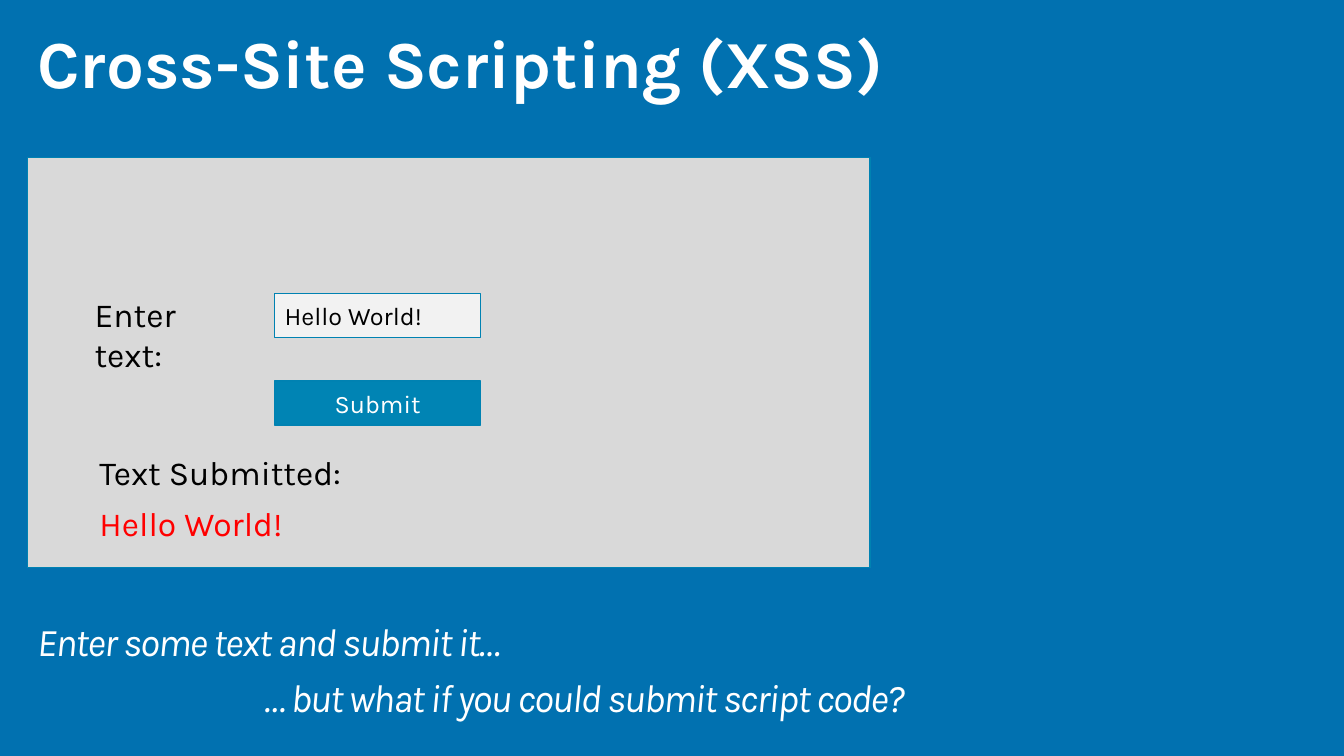
import pptx
import pptx.util
import pptx.dml.color
import pptx.enum.shapes
import pptx.enum.text
from dataclasses import dataclass

Pt = pptx.util.Pt
Align = pptx.enum.text.PP_ALIGN
Anchor = pptx.enum.text.MSO_ANCHOR

TITLE = "Cross-Site Scripting (XSS)"
TEASERS = [
    ("Enter some text and submit it…", 19.5, 441.5),
    ("… but what if you could submit script code?", 181.5, 481.5),
]
FORM_LABELS = [
    ("Enter text:", "ink", 60.5, 206.5, 121.5),
    ("Text Submitted:", "ink", 64, 319.5, 279.5),
    ("Hello World!", "echo", 64, 355.5, 279.5),
]
FORM_CONTROLS = [
    ("Hello World!", "field", "ink", Align.LEFT, 209.5),
    ("Submit", "button", "white", Align.CENTER, 272.25),
]


@dataclass
class Theme:
    font: str = "Karla"
    background: str = "0171B0"
    panel: str = "D9D9D9"
    field: str = "F2F2F2"
    button: str = "0084B4"
    border: str = "0082B2"
    ink: str = "000000"
    white: str = "FFFFFF"
    echo: str = "FF0000"
    title_size: int = 48
    teaser_size: int = 28
    label_size: int = 24
    control_size: int = 18


THEME = Theme()


def rgb(role):
    return pptx.dml.color.RGBColor.from_string(getattr(THEME, role))


def place(*lengths):
    return [Pt(length) for length in lengths]


def write(frame, text, size, role, align=Align.LEFT, anchor=Anchor.TOP):
    frame.word_wrap = True
    frame.auto_size = pptx.enum.text.MSO_AUTO_SIZE.NONE
    frame.vertical_anchor = anchor
    paragraph = frame.paragraphs[0]
    paragraph.text = text
    paragraph.alignment = align
    paragraph.font.name = THEME.font
    paragraph.font.size = Pt(size)
    paragraph.font.color.rgb = rgb(role)
    return paragraph


def add_box(slide, role, *lengths):
    box = slide.shapes.add_shape(
        pptx.enum.shapes.MSO_SHAPE.RECTANGLE, *place(*lengths))
    box.shadow.inherit = False
    box.fill.solid()
    box.fill.fore_color.rgb = rgb(role)
    box.line.color.rgb = rgb("border")
    box.line.width = Pt(1)
    return box


def add_text(slide, *lengths):
    return slide.shapes.add_textbox(*place(*lengths)).text_frame


def main():
    deck = pptx.Presentation()
    deck.slide_width, deck.slide_height = place(960, 540)
    slide = deck.slides.add_slide(deck.slide_layouts.get_by_name("Title Only"))
    slide.background.fill.solid()
    slide.background.fill.fore_color.rgb = rgb("background")

    title = slide.shapes.title
    title.left, title.top, title.width, title.height = place(19.5, 18, 919.5, 59)
    heading = write(title.text_frame, TITLE, THEME.title_size, "white",
                    anchor=Anchor.MIDDLE)
    heading.font.bold = True
    heading.line_spacing = 0.9

    add_box(slide, "panel", 19.5, 112.5, 602, 293)
    for text, role, left, top, width in FORM_LABELS:
        write(add_text(slide, left, top, width, 36), text, THEME.label_size, role)
    for text, fill, role, align, top in FORM_CONTROLS:
        control = add_box(slide, fill, 196.25, top, 147, 31.5)
        write(control.text_frame, text, THEME.control_size, role, align,
              Anchor.MIDDLE)

    for text, left, top in TEASERS:
        teaser = write(add_text(slide, left, top, 602, 40), text,
                       THEME.teaser_size, "white")
        teaser.font.italic = True
        teaser.line_spacing = 0.9
        teaser.runs[0].font._element.set("spc", "-100")

    deck.save("out.pptx")


if __name__ == "__main__":
    main()
